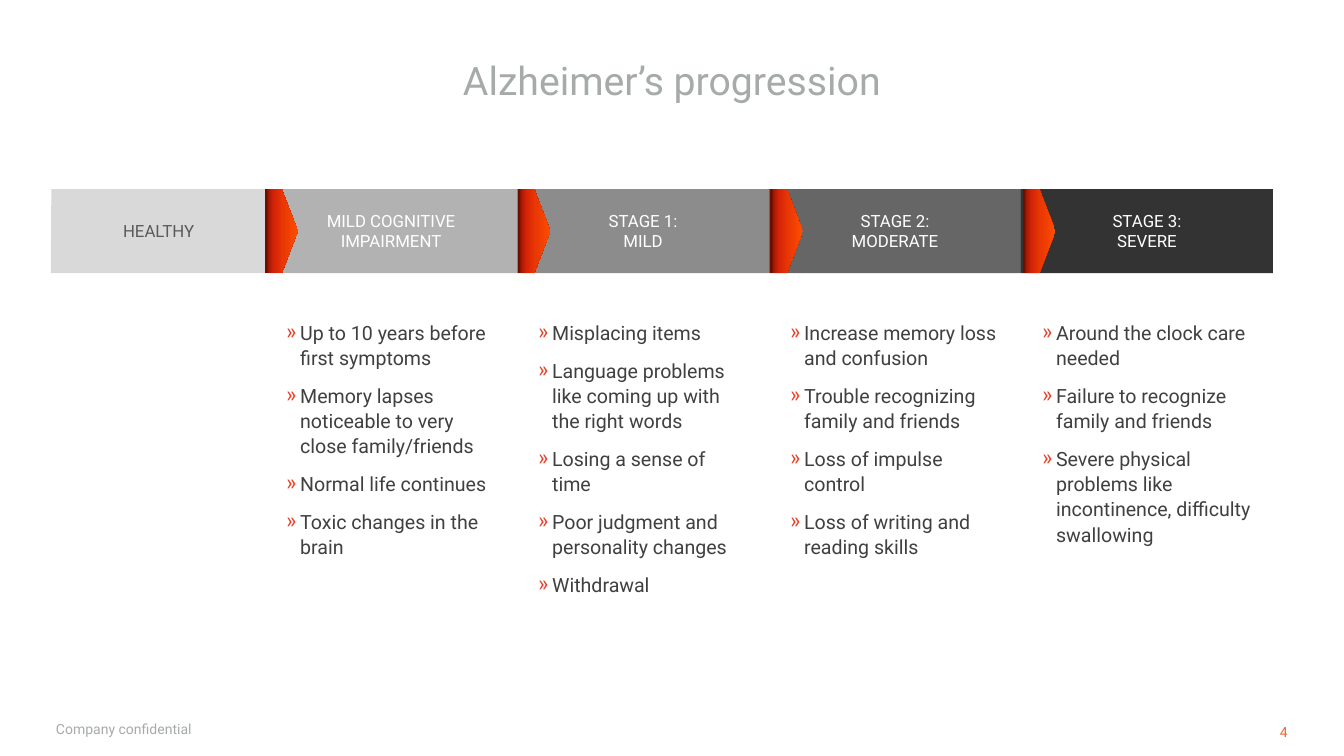
import pptx
import pptx.dml.color
import pptx.enum.shapes
import pptx.enum.text
import pptx.oxml.ns
import pptx.util
from lxml import etree

Cm, Pt = pptx.util.Cm, pptx.util.Pt
RGBColor = pptx.dml.color.RGBColor
ALIGN = pptx.enum.text.PP_ALIGN
ANCHOR = pptx.enum.text.MSO_ANCHOR
SHAPE = pptx.enum.shapes.MSO_SHAPE
qn = pptx.oxml.ns.qn

FONT = "Roboto"
BLACK = RGBColor(0x00, 0x00, 0x00)
WHITE = RGBColor(0xFF, 0xFF, 0xFF)
SILVER = RGBColor(0xA6, 0xAA, 0xA9)
GREY = RGBColor(0x5A, 0x5A, 0x5A)
DARK = RGBColor(0x40, 0x40, 0x40)
ORANGE = RGBColor(0xEC, 0x66, 0x2B)
RED = RGBColor(0xE7, 0x40, 0x26)
ARROW_STOPS = [
    (5, RGBColor(0x6D, 0x0F, 0x00)),
    (11, RGBColor(0xA1, 0x19, 0x04)),
    (27, RGBColor(0xD5, 0x24, 0x08)),
    (56, RGBColor(0xEA, 0x38, 0x04)),
    (100, RGBColor(0xFF, 0x4D, 0x00)),
]

HEALTHY_WIDTH = 10.8
STAGE_PITCH = 12.7
ARROW_PITCH = 12.73
ARROW_WIDTH = 1.65

# Heading, opacity of black in percent, symptoms
STAGES = [
    ("MILD COGNITIVE IMPAIRMENT", 30, [
        "Up to 10 years before first symptoms",
        "Memory lapses noticeable to very close family/friends",
        "Normal life continues",
        "Toxic changes in the brain"]),
    ("STAGE 1:\nMILD", 45, [
        "Misplacing items",
        "Language problems like coming up with the right words",
        "Losing a sense of time",
        "Poor judgment and personality changes",
        "Withdrawal"]),
    ("STAGE 2:\nMODERATE", 60, [
        "Increase memory loss and confusion",
        "Trouble recognizing family and friends",
        "Loss of impulse control",
        "Loss of writing and reading skills"]),
    ("STAGE 3:\nSEVERE", 80, [
        "Around the clock care needed",
        "Failure to recognize family and friends",
        "Severe physical problems like incontinence, difficulty swallowing"]),
]


def add_bullet(p):
    pPr = p._p.get_or_add_pPr()
    pPr.set("marL", str(Cm(0.71)))
    pPr.set("indent", str(-Cm(0.71)))
    clr = etree.SubElement(pPr, qn("a:buClr"))
    etree.SubElement(clr, qn("a:srgbClr"), val=str(RED))
    etree.SubElement(pPr, qn("a:buChar"), char="»")


def set_text(tf, text, size, color, align=ALIGN.LEFT, bullet=False,
             line_spacing=None, space_before=0):
    """Fill a text frame, one paragraph for each line of text."""
    for i, line in enumerate(text.split("\n")):
        p = tf.add_paragraph() if i else tf.paragraphs[0]
        if bullet:
            add_bullet(p)
        p.alignment = align
        p.line_spacing = line_spacing
        p.space_before = Pt(space_before if i else 0)
        r = p.add_run()
        r.text = line
        r.font.name = FONT
        r.font.size = Pt(size)
        r.font.color.rgb = color


def set_frame(tf, inset, anchor):
    tf.margin_left = tf.margin_right = Cm(inset)
    tf.margin_top = tf.margin_bottom = Cm(inset)
    tf.vertical_anchor = anchor
    tf.word_wrap = True


def style_stage(s, text, opacity, color):
    s.shadow.inherit = False
    s.line.fill.background()
    s.fill.solid()
    s.fill.fore_color.rgb = BLACK
    clr = s._element.spPr.find(qn("a:solidFill"))[0]
    etree.SubElement(clr, qn("a:alpha"), val=str(opacity * 1000))
    set_frame(s.text_frame, 0.6, ANCHOR.MIDDLE)
    set_text(s.text_frame, text, 24, color, align=ALIGN.CENTER)


def add_healthy(slide, x, y, w, h):
    builder = slide.shapes.build_freeform(Cm(x + 0.03), Cm(y))
    builder.add_line_segments(
        [(Cm(x + w), Cm(y)), (Cm(x + w), Cm(y + h)), (Cm(x), Cm(y + h))])
    style_stage(builder.convert_to_shape(), "HEALTHY", 15, GREY)


def add_arrow(slide, x, y, w, h):
    s = slide.shapes.add_shape(SHAPE.RIGHT_ARROW, Cm(x), Cm(y), Cm(w), Cm(h))
    s.adjustments[0], s.adjustments[1] = 1, 0.49
    s.shadow.inherit = False
    s.line.fill.background()
    s.fill.gradient()
    s.fill.gradient_angle = 0
    stops = s._element.spPr.find(qn("a:gradFill")).find(qn("a:gsLst"))
    for gs in list(stops):
        stops.remove(gs)
    for position, color in ARROW_STOPS:
        gs = etree.SubElement(stops, qn("a:gs"), pos=str(position * 1000))
        etree.SubElement(gs, qn("a:srgbClr"), val=str(color))


def add_stage_bar(slide, x, y, h):
    add_healthy(slide, x, y, HEALTHY_WIDTH + 0.07, h)
    x += HEALTHY_WIDTH
    for i, (heading, opacity, _) in enumerate(STAGES):
        s = slide.shapes.add_shape(
            SHAPE.RECTANGLE, Cm(x + i * STAGE_PITCH), Cm(y),
            Cm(STAGE_PITCH), Cm(h))
        style_stage(s, heading, opacity, WHITE)
    for i in range(len(STAGES)):
        add_arrow(slide, x + i * ARROW_PITCH, y, ARROW_WIDTH, h)


def add_symptoms(slide, x, y, h):
    table = slide.shapes.add_table(
        1, len(STAGES), Cm(x), Cm(y), Cm(len(STAGES) * STAGE_PITCH), Cm(h)).table
    table.first_row = table.horz_banding = False
    for cell, (_, _, symptoms) in zip(table.iter_cells(), STAGES):
        cell.fill.solid()
        cell.fill.fore_color.rgb = WHITE
        cell.margin_left = cell.margin_right = Cm(1.06)
        cell.margin_top = cell.margin_bottom = Cm(1.06)
        set_text(cell.text_frame, "\n".join(symptoms), 28, DARK,
                 bullet=True, line_spacing=1.1, space_before=18)


def add_title(slide, x, y, w, h):
    s = slide.shapes.title
    s.left, s.top, s.width, s.height = Cm(x), Cm(y), Cm(w), Cm(h)
    set_frame(s.text_frame, 0, ANCHOR.TOP)
    s.text_frame.auto_size = pptx.enum.text.MSO_AUTO_SIZE.NONE
    set_text(s.text_frame, "Alzheimer’s progression", 56, SILVER,
             align=ALIGN.CENTER)


def add_footer(slide, x, y, w, h):
    """Place the confidentiality note and the page number at either end."""
    note_w, number_w = 10, 0.48
    for text, left, top, width, color, align in (
            ("Company confidential", x, y, note_w, SILVER, ALIGN.LEFT),
            ("4", x + w - number_w, y + 0.12, number_w, ORANGE, ALIGN.RIGHT)):
        s = slide.shapes.add_textbox(Cm(left), Cm(top), Cm(width), Cm(h))
        set_frame(s.text_frame, 0, ANCHOR.MIDDLE)
        set_text(s.text_frame, text, 20, color, align=align)


def main():
    prs = pptx.Presentation()
    prs.slide_width, prs.slide_height = Cm(67.74), Cm(38.1)
    slide = prs.slides.add_slide(prs.slide_layouts[5])
    add_title(slide, 2.82, 2.82, 62.1, 4.24)
    add_stage_bar(slide, 2.56, 9.53, 4.24)
    add_symptoms(slide, 2.56 + HEALTHY_WIDTH, 15.06, 16.97)
    add_footer(slide, 2.82, 36.3, 62.08, 0.9)
    prs.save("out.pptx")


if __name__ == "__main__":
    main()
